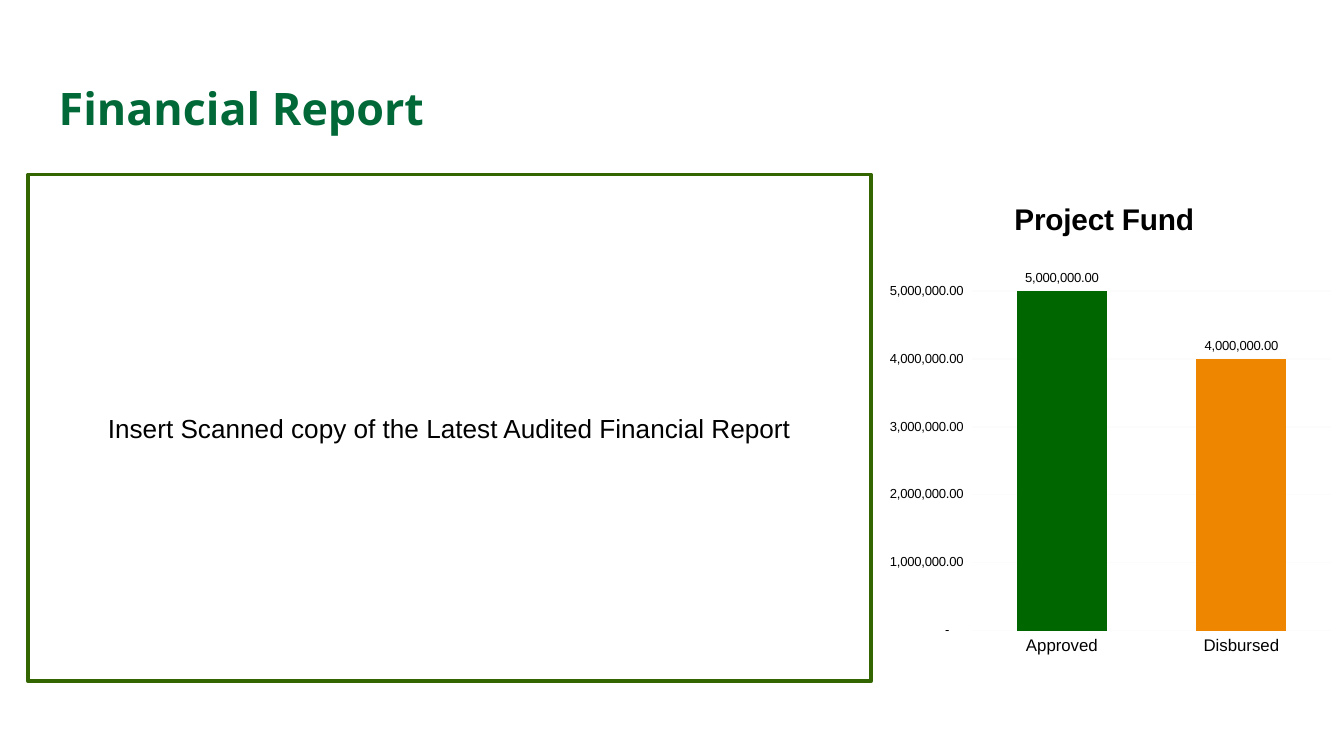
from pptx import Presentation
from pptx.chart.data import CategoryChartData
from pptx.dml.color import RGBColor
from pptx.enum.chart import XL_CHART_TYPE, XL_LABEL_POSITION, XL_TICK_MARK
from pptx.enum.shapes import MSO_SHAPE
from pptx.enum.text import MSO_ANCHOR, MSO_AUTO_SIZE, PP_ALIGN
from pptx.oxml import parse_xml
from pptx.oxml.ns import nsdecls
from pptx.util import Cm, Pt

AMOUNT_FORMAT = '_(* #,##0.00_);_(* \\(#,##0.00\\);_(* "-"??_);_(@_)'


def color(hex_value):
    return RGBColor.from_string(hex_value)


def apply(target, **values):
    for name, value in values.items():
        setattr(target, name, value)


def set_layout(parent, index, **fractions):
    """Place a chart part at the given fractions of the chart area."""
    for old_layout in parent.xpath("c:layout"):
        parent.remove(old_layout)
    target = '<c:layoutTarget val="inner"/>' if "w" in fractions else ""
    modes = "".join(f'<c:{key}Mode val="edge"/>' for key in "xy")
    places = "".join(f'<c:{key} val="{value}"/>' for key, value in fractions.items())
    parent.insert(index, parse_xml(
        f'<c:layout {nsdecls("c")}><c:manualLayout>{target}{modes}{places}'
        '</c:manualLayout></c:layout>'))


class ReportSlide:
    heading_font, body_font = "Open Sans", "Arial"
    heading, ink, paper = "016938", "000000", "FFFFFF"
    frame, grid = "336600", "FCFCFC"

    def __init__(self, presentation):
        self.slide = presentation.slides.add_slide(presentation.slide_layouts[5])

    def style_font(self, font, size, name=body_font, hex_value=ink, bold=False):
        apply(font, size=Pt(size), name=name, bold=bold)
        font.color.rgb = color(hex_value)

    def style_line(self, line, hex_value, width):
        line.color.rgb = color(hex_value)
        line.width = Pt(width)

    def title(self, text, left, top, width, height):
        title = self.slide.shapes.title
        apply(title, left=Cm(left), top=Cm(top), width=Cm(width), height=Cm(height))
        frame = title.text_frame
        inset = Cm(0.25)
        apply(frame, text=text, auto_size=MSO_AUTO_SIZE.NONE,
              vertical_anchor=MSO_ANCHOR.MIDDLE, margin_left=inset,
              margin_right=inset, margin_top=inset, margin_bottom=inset)
        paragraph = frame.paragraphs[0]
        paragraph.alignment = PP_ALIGN.LEFT
        self.style_font(paragraph.runs[0].font, 24, self.heading_font,
                        self.heading, True)

    def box(self, text, left, top, width, height):
        box = self.slide.shapes.add_shape(
            MSO_SHAPE.RECTANGLE, Cm(left), Cm(top), Cm(width), Cm(height))
        box.shadow.inherit = False
        box.fill.solid()
        box.fill.fore_color.rgb = color(self.paper)
        self.style_line(box.line, self.frame, 2)
        apply(box.text_frame, text=text, word_wrap=True,
              vertical_anchor=MSO_ANCHOR.MIDDLE)
        paragraph = box.text_frame.paragraphs[0]
        paragraph.alignment = PP_ALIGN.CENTER
        self.style_font(paragraph.runs[0].font, 14)

    def column_chart(self, heading, amounts, fills, left, top, width, height):
        data = CategoryChartData()
        data.categories = list(amounts)
        data.add_series("Series 1", list(amounts.values()))
        chart = self.slide.shapes.add_chart(
            XL_CHART_TYPE.COLUMN_CLUSTERED, Cm(left), Cm(top), Cm(width),
            Cm(height), data).chart
        chart.has_legend = False
        self.style_font(chart.font, 10)

        chart_title = chart.chart_title
        chart_title.text_frame.text = heading
        self.style_font(chart_title.text_frame.paragraphs[0].runs[0].font, 16, bold=True)
        set_layout(chart_title.element, 1, x=0.3, y=0.04)
        set_layout(chart.element.xpath("c:chart/c:plotArea")[0], 0,
                   x=0.22, y=0.23, w=0.78, h=0.67)

        for axis, size in ((chart.category_axis, 9), (chart.value_axis, 7)):
            apply(axis, major_tick_mark=XL_TICK_MARK.NONE,
                  minor_tick_mark=XL_TICK_MARK.NONE)
            self.style_font(axis.tick_labels.font, size)
        self.style_line(chart.category_axis.format.line, self.grid, 0.75)
        amount_axis = chart.value_axis
        apply(amount_axis, minimum_scale=0, maximum_scale=5000000,
              major_unit=1000000, has_major_gridlines=True)
        self.style_line(amount_axis.major_gridlines.format.line, self.grid, 0.75)
        amount_axis.format.line.fill.background()

        plot = chart.plots[0]
        apply(plot, gap_width=100, overlap=-24, vary_by_categories=False)
        series = plot.series[0]
        for index, hex_value in enumerate(fills):
            fill = series.points[index].format.fill
            fill.solid()
            fill.fore_color.rgb = color(hex_value)
        labels = series.data_labels
        apply(labels, show_value=True, position=XL_LABEL_POSITION.OUTSIDE_END)
        self.style_font(labels.font, 7)
        for amount_labels in (labels, amount_axis.tick_labels):
            apply(amount_labels, number_format=AMOUNT_FORMAT,
                  number_format_is_linked=False)


def main():
    presentation = Presentation()
    apply(presentation, slide_width=Cm(25.4), slide_height=Cm(14.29))
    report = ReportSlide(presentation)
    report.title("Financial Report", 0.86, 1.24, 23.67, 1.6)

    box_left, box_width, top, height = 0.53, 15.93, 3.3, 9.58
    report.column_chart("Project Fund", {"Approved": 5000000, "Disbursed": 4000000},
                        ("006600", "EF8600"), box_left + box_width, top, 8.71, height)
    report.box("Insert Scanned copy of the Latest Audited Financial Report",
               box_left, top, box_width, height)
    presentation.save("out.pptx")


if __name__ == "__main__":
    main()
